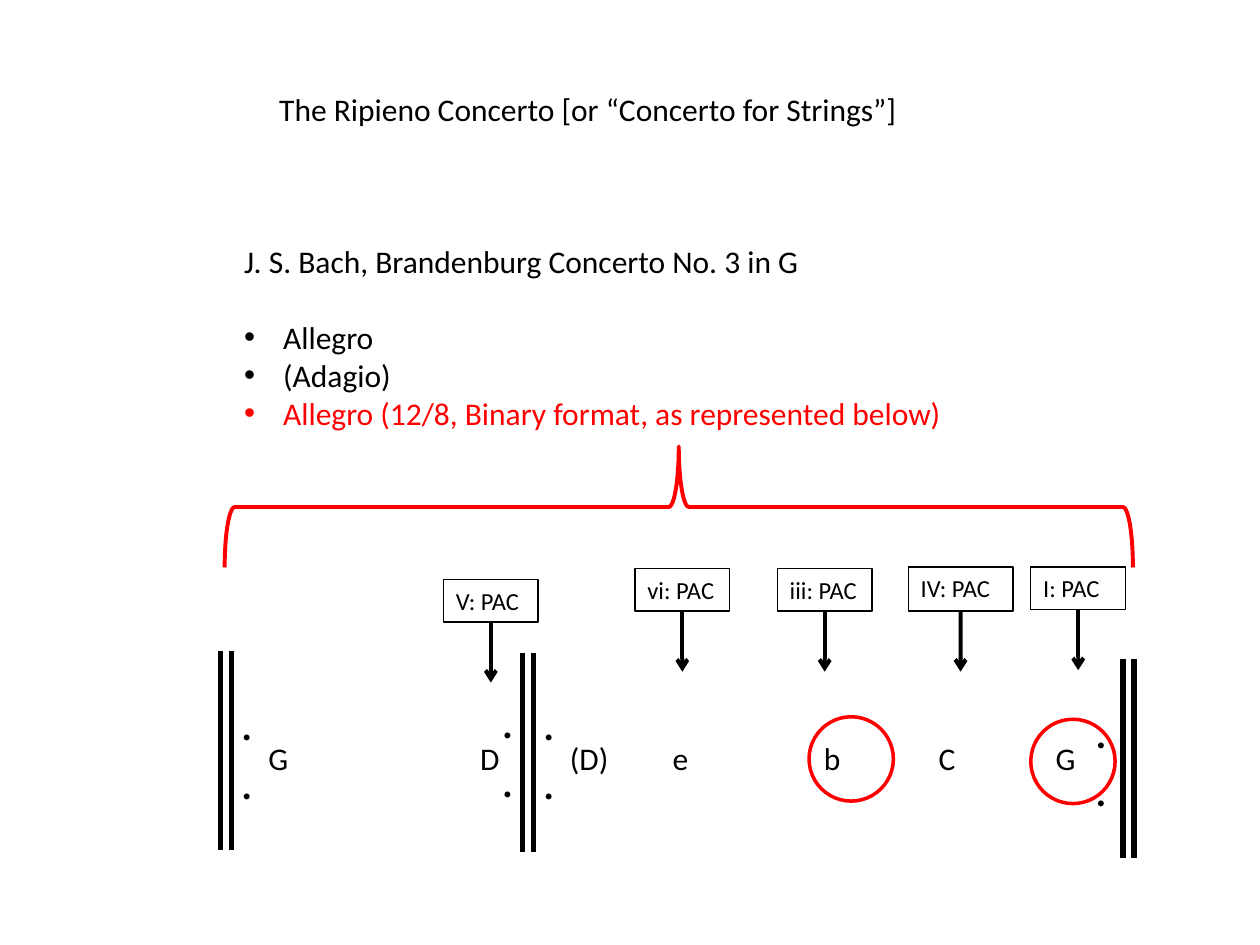
from lxml import etree
from pptx import Presentation
from pptx.dml.color import RGBColor
from pptx.enum.shapes import MSO_CONNECTOR, MSO_SHAPE
from pptx.enum.text import MSO_ANCHOR, MSO_AUTO_SIZE, PP_ALIGN
from pptx.oxml.ns import qn
from pptx.util import Cm, Pt

STRAIGHT = MSO_CONNECTOR.STRAIGHT
RECTANGLE, ELLIPSE, BRACE = MSO_SHAPE.RECTANGLE, MSO_SHAPE.OVAL, MSO_SHAPE.RIGHT_BRACE
LEFT, TOP = PP_ALIGN.LEFT, MSO_ANCHOR.TOP
GROW = MSO_AUTO_SIZE.SHAPE_TO_FIT_TEXT
BOTTOM_SIDE = 2

COLORS = {"ink": "000000", "accent": "FF0000"}
FRAME_FORMAT = {"word_wrap": True, "auto_size": GROW, "vertical_anchor": TOP}


def apply_format(target, values):
    for name, value in values.items():
        setattr(target, name, value)


def color(name):
    return RGBColor.from_string(COLORS[name])


def style_line(line, color_name, width):
    line.color.rgb = color(color_name)
    line.width = Pt(width)


def write_text(frame, lines, size):
    """Fill a frame with (text, color name) lines and return its paragraphs."""
    apply_format(frame, FRAME_FORMAT)
    for index, (text, color_name) in enumerate(lines):
        paragraph = frame.paragraphs[0] if index == 0 else frame.add_paragraph()
        paragraph.alignment = LEFT
        run = paragraph.add_run()
        run.text = text
        apply_format(run.font, {"name": "Calibri", "size": Pt(size)})
        run.font.color.rgb = color(color_name)
    return frame.paragraphs


def add_text(slide, box, lines, size=18):
    textbox = slide.shapes.add_textbox(*map(Cm, box))
    return write_text(textbox.text_frame, lines, size)


def add_outline(slide, kind, box, color_name, width):
    outline = slide.shapes.add_shape(kind, *map(Cm, box))
    outline.shadow.inherit = False
    outline.fill.background()
    style_line(outline.line, color_name, width)
    return outline


def add_stroke(slide, x, top, length, width):
    stroke = slide.shapes.add_connector(STRAIGHT, Cm(x), Cm(top), Cm(x), Cm(top + length))
    style_line(stroke.line, "ink", width)
    etree.SubElement(stroke._element.spPr, qn("a:effectLst"))
    return stroke


def add_title(slide, box):
    add_text(slide, box, [("The Ripieno Concerto [or “Concerto for Strings”]", "ink")])


def add_movements(slide, box):
    work, *movements = add_text(slide, box, [
        ("J. S. Bach, Brandenburg Concerto No. 3 in G", "ink"),
        ("Allegro", "ink"),
        ("(Adagio)", "ink"),
        ("Allegro (12/8, Binary format, as represented below)", "accent"),
    ])
    work.space_after = Pt(22)
    indent = Cm(0.79)
    for movement in movements:
        properties = movement._p.get_or_add_pPr()
        properties.set("marL", str(indent))
        properties.set("indent", str(-indent))
        etree.SubElement(properties, qn("a:buFont"), typeface="Arial")
        etree.SubElement(properties, qn("a:buChar"), char="•")


def add_brace(slide, box):
    """Turn a right brace so that it spans the box and points up."""
    left, top, width, height = box
    shift = (width - height) / 2
    upright = (left + shift, top - shift, height, width)
    add_outline(slide, BRACE, upright, "accent", 2.25).rotation = 270


def add_barlines(slide, left, top):
    bar_height, bar_gap = 4.01, 0.22
    for x, y in ((0, 0), (6.08, 0.03), (18.19, 0.15)):
        for offset in (0, bar_gap):
            add_stroke(slide, left + x + offset, top + y, bar_height, 3)

    # Repeat dots
    for x, y in ((0.15, 0.69), (5.41, 0.64), (6.24, 0.69), (17.37, 0.84)):
        add_text(slide, (left + x, top + y, 1.07, 2.64), [(".", "ink")] * 2, 28)


def add_cadences(slide, left, top):
    arrow_length = 1.22
    cadences = (
        ("V", 0, 0.25, 1.91, 0.86),
        ("vi", 3.86, 0.03, 1.91, 0.86),
        ("iii", 6.73, 0.03, 1.91, 0.86),
        ("IV", 9.37, 0, 2.11, 0.89),
        ("I", 11.84, 0, 1.91, 0.86),
    )
    for degree, x, y, width, height in cadences:
        label = add_outline(slide, RECTANGLE, (left + x, top + y, width, height), "ink", 0.75)
        write_text(label.text_frame, [(f"{degree}: PAC", "ink")], 14)
        arrow = add_stroke(slide, left + x + width / 2, top + y + height, arrow_length, 2.25)
        arrow.begin_connect(label, BOTTOM_SIDE)
        etree.SubElement(arrow.line._get_or_add_ln(), qn("a:tailEnd"), type="arrow")


def add_keys(slide, box):
    left, top = box[:2]
    keys = (("G", 0.71), ("D", 4.98), ("(D)", 6.79), ("e", 8.86),
            ("b", 11.91), ("C", 14.22), ("G", 16.58))
    text = "".join(f"\t{key}" for key, _ in keys)
    row = add_text(slide, box, [(text, "ink")])[0]
    tabs = etree.SubElement(row._p.get_or_add_pPr(), qn("a:tabLst"))
    for _, position in keys:
        etree.SubElement(tabs, qn("a:tab"), pos=str(Cm(position)), algn="l")

    # Circled keys
    diameter = 1.7
    for x, y in ((11.86, -0.33), (16.33, -0.28)):
        add_outline(slide, ELLIPSE, (left + x, top + y, diameter, diameter), "accent", 2)


def main():
    presentation = Presentation()
    apply_format(presentation, {"slide_width": Cm(25.4), "slide_height": Cm(19.05)})
    slide = presentation.slides.add_slide(presentation.slide_layouts[6])

    add_barlines(slide, 4.45, 13.13)
    add_cadences(slide, 8.94, 11.43)
    add_keys(slide, (4.45, 14.78, 18.19, 1.02))
    add_movements(slide, (4.67, 4.75, 16, 4.11))
    add_title(slide, (5.38, 1.7, 13.34, 1.02))
    add_brace(slide, (4.53, 9, 18.31, 2.44))

    presentation.save("out.pptx")


if __name__ == "__main__":
    main()
